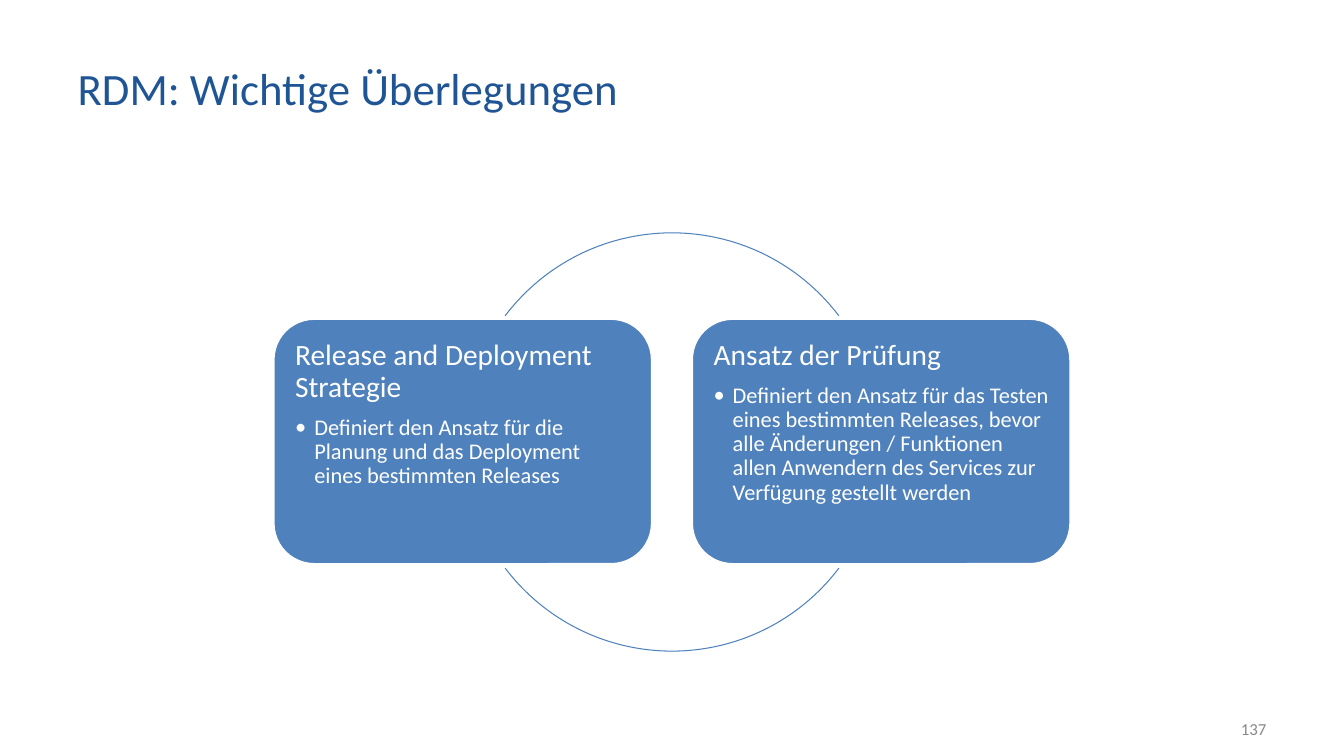
from dataclasses import dataclass

import pptx
import pptx.dml.color
import pptx.enum.shapes
import pptx.enum.text
import pptx.oxml
import pptx.oxml.ns
import pptx.util

PX = 9144
ALIGN = pptx.enum.text.PP_ALIGN
ANCHOR = pptx.enum.text.MSO_ANCHOR
SHAPE = pptx.enum.shapes.MSO_SHAPE
Color = pptx.dml.color.RGBColor


@dataclass(frozen=True)
class Theme:
    font: str = "Calibri"
    title_color: Color = Color(0x20, 0x55, 0x95)
    accent: Color = Color(0x4F, 0x81, 0xBD)
    white: Color = Color(0xFF, 0xFF, 0xFF)
    gray: Color = Color(0x88, 0x88, 0x88)
    title_size: int = 32
    heading_size: int = 21
    body_size: int = 16
    number_size: int = 12


@dataclass(frozen=True)
class Card:
    heading: str
    detail: str


@dataclass(frozen=True)
class Arc:
    start: float
    end: float


THEME = Theme()
CARD_LEFT, CARD_TOP, CARD_WIDTH, CARD_HEIGHT, CARD_STEP = 271, 316, 376, 244, 415
CIRCLE_LEFT, CIRCLE_TOP, CIRCLE_SIZE = 459, 231, 415

CARDS = [
    Card(
        "Release and Deployment Strategie",
        "Definiert den Ansatz für die Planung und das Deployment eines bestimmten Releases",
    ),
    Card(
        "Ansatz der Prüfung",
        "Definiert den Ansatz für das Testen eines bestimmten Releases, bevor alle Änderungen / "
        "Funktionen allen Anwendern des Services zur Verfügung gestellt werden",
    ),
]
ARCS = [Arc(217.1, 322.9), Arc(37.1, 142.9)]


def px(*values: int) -> list[pptx.util.Emu]:
    return [pptx.util.Emu(value * PX) for value in values]


def style(para, size: int, color: Color, align=ALIGN.LEFT) -> None:
    para.alignment = align
    for span in para.runs:
        span.font.name = THEME.font
        span.font.size = pptx.util.Pt(size)
        span.font.color.rgb = color


def add_bullet(para) -> None:
    properties = para._p.get_or_add_pPr()
    left, hanging = px(19, -19)
    properties.set("marL", str(left))
    properties.set("indent", str(hanging))
    namespace = pptx.oxml.ns.nsdecls("a")
    for tag in (f'buFont {namespace} typeface="{THEME.font}"', f'buChar {namespace} char="•"'):
        properties.append(pptx.oxml.parse_xml(f"<a:{tag}/>"))


def draw_title(page, text: str) -> None:
    title = page.shapes.title
    title.left, title.top, title.width, title.height = px(67, 30, 990, 114)
    frame = title.text_frame
    frame.text = text
    frame.auto_size = pptx.enum.text.MSO_AUTO_SIZE.NONE
    frame.vertical_anchor = ANCHOR.MIDDLE
    style(frame.paragraphs[0], THEME.title_size, THEME.title_color)


def draw_arc(page, arc: Arc) -> None:
    curve = page.shapes.add_shape(
        SHAPE.ARC, *px(CIRCLE_LEFT, CIRCLE_TOP, CIRCLE_SIZE, CIRCLE_SIZE)
    )
    for index, angle in enumerate((arc.start, arc.end)):
        curve.adjustments[index] = angle * 0.6
    curve.shadow.inherit = False
    curve.fill.background()
    curve.line.color.rgb = THEME.accent
    curve.line.width = pptx.util.Pt(0.75)


def draw_card(page, card: Card, column: int) -> None:
    box = page.shapes.add_shape(
        SHAPE.ROUNDED_RECTANGLE,
        *px(CARD_LEFT + column * CARD_STEP, CARD_TOP, CARD_WIDTH, CARD_HEIGHT),
    )
    box.adjustments[0] = 0.167
    box.shadow.inherit = False
    box.fill.solid()
    box.fill.fore_color.rgb = THEME.accent
    box.line.color.rgb = THEME.white
    box.line.width = pptx.util.Pt(2)

    frame = box.text_frame
    frame.word_wrap = True
    frame.vertical_anchor = ANCHOR.TOP
    frame.margin_left, frame.margin_top, frame.margin_right, frame.margin_bottom = px(10, 10, 7, 10)
    frame.text = card.heading
    heading = frame.paragraphs[0]
    detail = frame.add_paragraph()
    detail.text = card.detail
    detail.level = 1
    add_bullet(detail)
    detail.space_before = pptx.util.Pt(8.4)
    for para, size in ((heading, THEME.heading_size), (detail, THEME.body_size)):
        para.line_spacing = 0.9
        style(para, size, THEME.white)


def draw_page_number(page, text: str) -> None:
    box = page.shapes.add_textbox(*px(956, 703, 310, 40))
    frame = box.text_frame
    frame.word_wrap = True
    frame.vertical_anchor = ANCHOR.MIDDLE
    frame.text = text
    style(frame.paragraphs[0], THEME.number_size, THEME.gray, ALIGN.RIGHT)


def main() -> None:
    deck = pptx.Presentation()
    deck.slide_width, deck.slide_height = px(1333, 750)
    page = deck.slides.add_slide(deck.slide_layouts.get_by_name("Title Only"))
    draw_title(page, "RDM: Wichtige Überlegungen")
    for column, (card, arc) in enumerate(zip(CARDS, ARCS)):
        draw_card(page, card, column)
        draw_arc(page, arc)
    draw_page_number(page, "137")
    deck.save("out.pptx")


if __name__ == "__main__":
    main()
